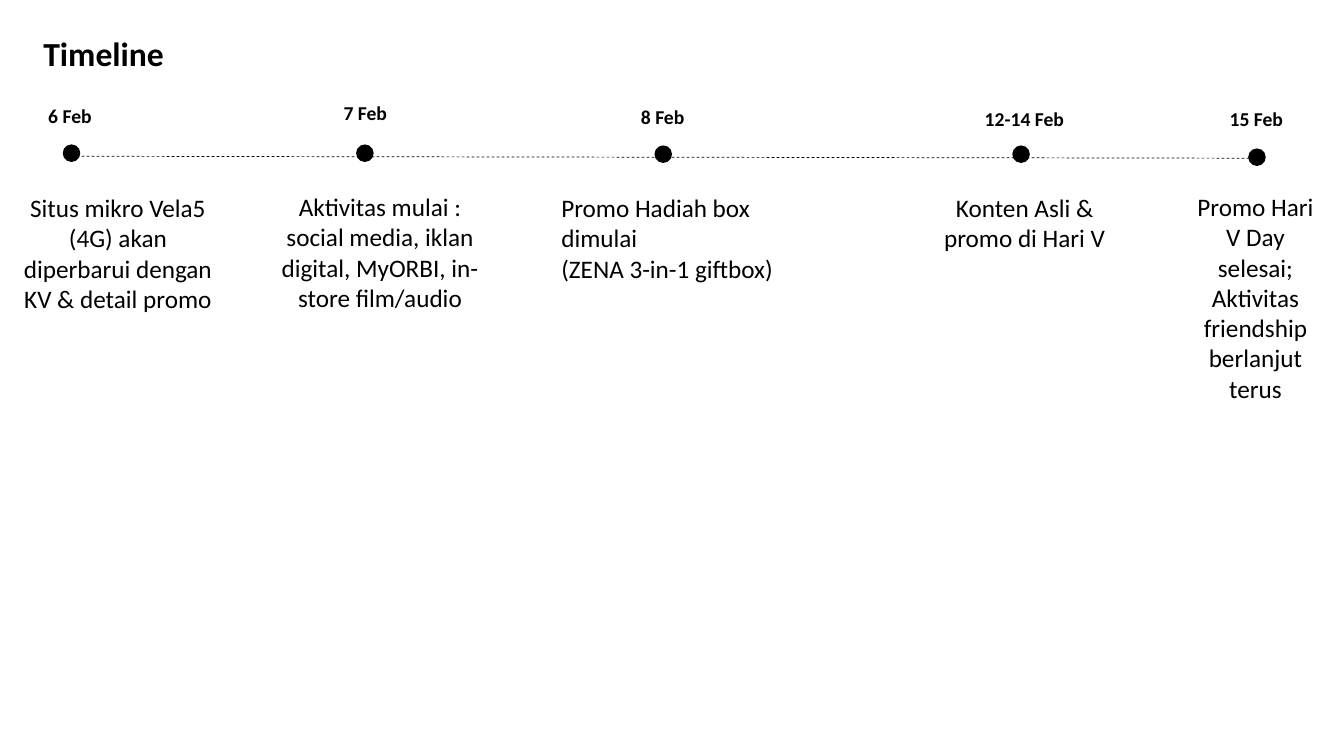
from dataclasses import dataclass

from lxml import etree
from pptx import Presentation
from pptx import util as u
from pptx.dml.color import RGBColor
from pptx.enum import dml, shapes, text
from pptx.oxml import ns

BLACK = RGBColor(0, 0, 0)
FONT = "Calibri"
CELL = u.Inches(0.1)
COLUMNS, ROWS = 133.33, 75
DOT_SIZE = 1.6


@dataclass(frozen=True)
class Area:
    column: float
    row: float
    columns: float
    rows: float


@dataclass(frozen=True)
class Milestone:
    date: str
    date_area: Area
    dot_column: float
    dot_row: float
    details: str
    details_area: Area
    align: text.PP_ALIGN = text.PP_ALIGN.CENTER


MILESTONES = [
    Milestone("6 Feb", Area(3.8, 9.8, 6.3, 3.4), 6.3, 14.4,
              "Situs mikro Vela5 (4G) akan diperbarui dengan KV & detail promo",
              Area(0.4, 18.6, 22.6, 13.1)),
    Milestone("7 Feb", Area(33.1, 9.5, 6.4, 3.4), 35.4, 14.4,
              "Aktivitas mulai : social media, iklan digital, MyORBI, in-store film/audio",
              Area(25.6, 18.5, 24.2, 13.1)),
    Milestone("8 Feb", Area(62.6, 9.9, 6.4, 3.4), 65, 14.5,
              "Promo Hadiah box dimulai\n(ZENA 3-in-1 giftbox)",
              Area(54.7, 18.6, 25.5, 10.1), text.PP_ALIGN.LEFT),
    Milestone("12-14 Feb", Area(96.7, 10.1, 9.9, 3.4), 100.5, 14.5,
              "Konten Asli & promo di Hari V",
              Area(90.8, 18.6, 21.7, 7.1)),
    Milestone("15 Feb", Area(121, 10.1, 7.4, 3.4), 123.9, 14.8,
              "Promo Hari V Day selesai; Aktivitas friendship berlanjut terus",
              Area(116.9, 18.5, 15.3, 22.2)),
]


def grid(count: float) -> u.Emu:
    return u.Emu(round(count * CELL))


def place(area: Area) -> list[u.Emu]:
    return [grid(n) for n in (area.column, area.row, area.columns, area.rows)]


def write(box, words: str, *, size: float, bold: bool = False, wrap: bool = True,
          align: text.PP_ALIGN = text.PP_ALIGN.LEFT) -> None:
    frame = box.text_frame
    frame.text = words
    frame.word_wrap = wrap
    frame.auto_size = text.MSO_AUTO_SIZE.SHAPE_TO_FIT_TEXT
    frame.vertical_anchor = text.MSO_ANCHOR.TOP
    for para in frame.paragraphs:
        para.alignment = align
        for span in para.runs:
            span.font.name = FONT
            span.font.size = u.Pt(size)
            span.font.bold = bold
            span.font.color.rgb = BLACK


def add_title(page, words: str, area: Area) -> None:
    box = page.shapes.title
    box.left, box.top, box.width, box.height = place(area)
    write(box, words, size=24, bold=True, wrap=False)


def add_axis(page) -> None:
    ends = [grid(n) for n in (7.1, 15.5, 125.5, 15.7)]
    axis = page.shapes.add_connector(shapes.MSO_CONNECTOR.STRAIGHT, *ends)
    axis.line.color.rgb = BLACK
    axis.line.width = u.Pt(0.5)
    axis.line.dash_style = dml.MSO_LINE.DASH
    etree.SubElement(axis.element.spPr, ns.qn("a:effectLst"))


def add_milestone(page, item: Milestone) -> None:
    dot_area = Area(item.dot_column, item.dot_row, DOT_SIZE, DOT_SIZE)
    dot = page.shapes.add_shape(shapes.MSO_SHAPE.OVAL, *place(dot_area))
    dot.shadow.inherit = False
    dot.fill.solid()
    dot.fill.fore_color.rgb = BLACK
    dot.line.color.rgb = BLACK
    dot.line.width = u.Pt(1)
    date = page.shapes.add_textbox(*place(item.date_area))
    write(date, item.date, size=14, bold=True, wrap=False)
    details = page.shapes.add_textbox(*place(item.details_area))
    write(details, item.details, size=18, align=item.align)


def main() -> None:
    deck = Presentation()
    deck.slide_width, deck.slide_height = grid(COLUMNS), grid(ROWS)
    page = deck.slides.add_slide(deck.slide_layouts.get_by_name("Title Only"))
    add_title(page, "Timeline", Area(3.3, 2.8, 14.1, 5))
    for item in MILESTONES:
        add_milestone(page, item)
    add_axis(page)
    deck.save("out.pptx")


if __name__ == "__main__":
    main()
